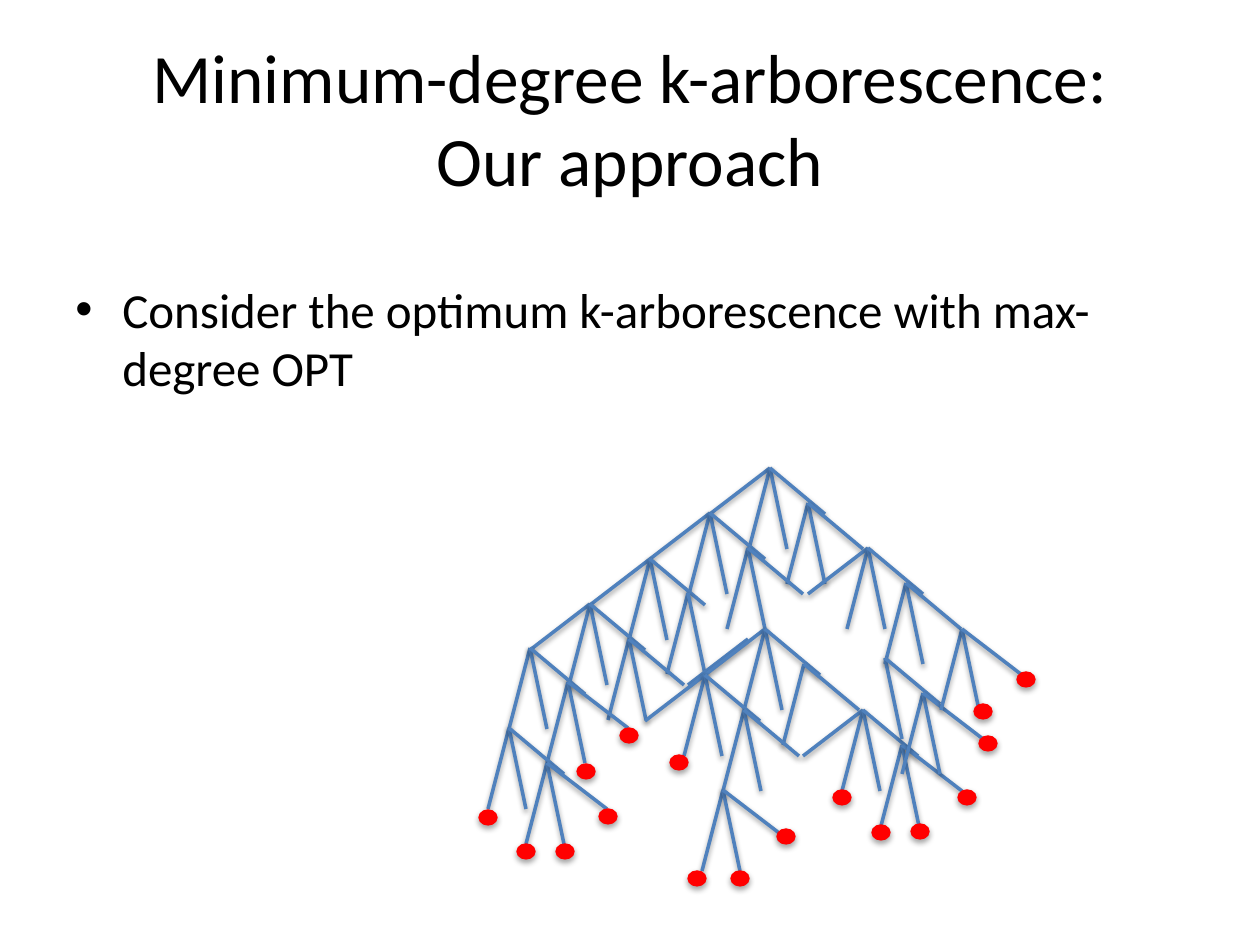
"""Builds the slide on the approach to the minimum-degree k-arborescence."""
from lxml import etree
from pptx import Presentation
from pptx.dml.color import RGBColor
from pptx.enum.shapes import MSO_CONNECTOR, MSO_SHAPE
from pptx.enum.text import MSO_ANCHOR, PP_ALIGN
from pptx.oxml.ns import qn
from pptx.util import Emu, Pt

STRAIGHT = MSO_CONNECTOR.STRAIGHT
OVAL = MSO_SHAPE.OVAL
TOP, MIDDLE = MSO_ANCHOR.TOP, MSO_ANCHOR.MIDDLE
LEFT, CENTER = PP_ALIGN.LEFT, PP_ALIGN.CENTER

FONT, TEXT_COLOR = "Calibri", "000000"
BRANCH_COLOR, TERMINAL_COLOR = "4F81BD", "FF0000"
TERMINAL_SIZE = (18, 15)

BRANCH_OFFSETS = {
    "A": (-60, 46),
    "B": (-21, 81),
    "C": (17, 81),
    "D": (55, 46),
    "E": (60, 46),
}
TREE_NODES = [
    (770, 468, "ABCD"), (808, 503, "BCD"), (710, 513, "ABCD"),
    (748, 548, "BCD"), (868, 548, "ABCD"), (906, 583, "BCD"),
    (650, 559, "ABCD"), (688, 593, "BC"), (590, 604, "ABCD"),
    (629, 639, "BCD"), (748, 639, "A"), (765, 629, "ABCD"),
    (804, 664, "BD"), (705, 675, "ABCD"), (744, 710, "BCD"),
    (863, 710, "ABCD"), (902, 745, "BCE"), (530, 648, "BCD"),
    (568, 682, "BCE"), (885, 658, "CD"), (923, 693, "BCE"),
    (509, 728, "BCD"), (547, 763, "BCE"), (723, 790, "BCE"),
    (962, 629, "BCE"),
]
TERMINALS = [
    (479, 810), (517, 844), (556, 844), (599, 809), (577, 764), (620, 728),
    (670, 755), (688, 871), (731, 871), (777, 829), (833, 790), (872, 825),
    (911, 824), (958, 790), (979, 736), (974, 704), (1017, 672),
]


def px(length):
    return Emu(round(length * 914400 / 126))


def color(hex_string):
    return RGBColor.from_string(hex_string)


class SlideBuilder:
    def __init__(self, presentation):
        self.slide = presentation.slides.add_slide(presentation.slide_layouts[6])

    def text(self, box, text, size, align=LEFT, anchor=TOP, margin=0, indent=0):
        shape = self.slide.shapes.add_textbox(*map(px, box))
        text_frame = shape.text_frame
        text_frame.word_wrap = True
        text_frame.vertical_anchor = anchor
        text_frame.text = text
        paragraph = text_frame.paragraphs[0]
        paragraph.alignment = align
        properties = paragraph._p.get_or_add_pPr()
        properties.set("marL", str(px(margin)))
        properties.set("indent", str(px(indent)))
        for run in paragraph.runs:
            run.font.name = FONT
            run.font.size = Pt(size)
            run.font.color.rgb = color(TEXT_COLOR)
        return paragraph

    def bullet(self, box, text, size, hang):
        paragraph = self.text(box, text, size, margin=hang, indent=-hang)
        paragraph.space_before = Pt(size * 0.2)
        properties = paragraph._p.get_or_add_pPr()
        etree.SubElement(properties, qn("a:buFont")).set("typeface", "Arial")
        etree.SubElement(properties, qn("a:buChar")).set("char", "•")

    def branch(self, x, y, offset):
        end_x, end_y = x + offset[0], y + offset[1]
        connector = self.slide.shapes.add_connector(
            STRAIGHT, px(x), px(y), px(end_x), px(end_y))
        connector.line.color.rgb = color(BRANCH_COLOR)
        connector.line.width = Pt(2)

    def terminal(self, left, top):
        shape = self.slide.shapes.add_shape(
            OVAL, *map(px, (left, top, *TERMINAL_SIZE)))
        shape.fill.solid()
        shape.fill.fore_color.rgb = color(TERMINAL_COLOR)
        shape.line.color.rgb = color(TERMINAL_COLOR)
        shape.line.width = Pt(0.75)


def main():
    presentation = Presentation()
    presentation.slide_width, presentation.slide_height = px(1260), px(945)
    builder = SlideBuilder(presentation)
    builder.text((63, 38, 1134, 158),
                 "Minimum-degree k-arborescence:\vOur approach",
                 39.6, CENTER, MIDDLE, indent=-48)
    builder.bullet((63, 273, 1134, 163),
                   "Consider the optimum k-arborescence with max-degree OPT",
                   28, hang=47)
    for x, y, branches in TREE_NODES:
        for branch in branches:
            builder.branch(x, y, BRANCH_OFFSETS[branch])
    for left, top in TERMINALS:
        builder.terminal(left, top)
    presentation.save("out.pptx")


if __name__ == "__main__":
    main()
